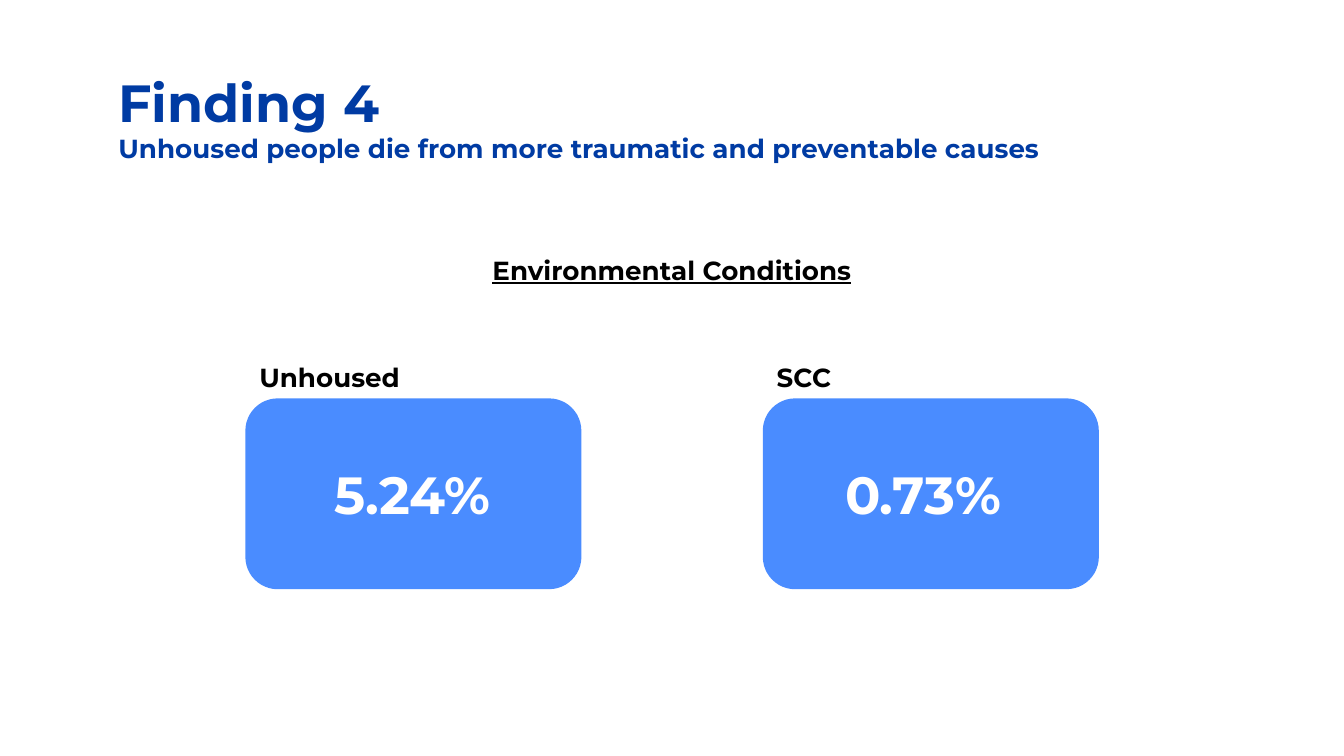
from pptx import Presentation
from pptx import util as u
from pptx.dml.color import RGBColor
from pptx.enum import shapes, text

COLORS = {"title": "003BA3", "card": "4A8CFF", "ink": "000000", "value": "FFFFFF"}
PAD = 7.2


class Deck:
    font = "Montserrat"

    def __init__(self, width, height):
        self.prs = Presentation()
        self.prs.slide_width, self.prs.slide_height = u.Pt(width), u.Pt(height)
        self.s = self.prs.slides.add_slide(self.prs.slide_layouts[5])

    def color(self, name):
        return RGBColor.from_string(COLORS[name])

    def frame(self, sp, lines, color, align, underline=None):
        tf = sp.text_frame
        tf.word_wrap = True
        tf.auto_size = text.MSO_AUTO_SIZE.NONE
        tf.vertical_anchor = text.MSO_ANCHOR.TOP
        tf.margin_left = tf.margin_right = tf.margin_top = tf.margin_bottom = u.Pt(PAD)
        for i, (words, size) in enumerate(lines):
            p = tf.add_paragraph() if i else tf.paragraphs[0]
            p.alignment = align
            r = p.add_run()
            r.text = words
            r.font.name, r.font.size, r.font.bold = self.font, u.Pt(size), True
            r.font.underline = underline
            r.font.color.rgb = self.color(color)

    def title(self, x, y, w, h, lines):
        sp = self.s.shapes.title
        sp.left, sp.top, sp.width, sp.height = map(u.Pt, (x, y, w, h))
        self.frame(sp, lines, "title", text.PP_ALIGN.LEFT)

    def label(self, x, y, w, h, words, size=14, color="ink",
              align=text.PP_ALIGN.LEFT, underline=None):
        sp = self.s.shapes.add_textbox(*map(u.Pt, (x, y, w, h)))
        self.frame(sp, [(words, size)], color, align, underline)

    def card(self, x, y, w, h):
        sp = self.s.shapes.add_shape(
            shapes.MSO_SHAPE.ROUNDED_RECTANGLE, *map(u.Pt, (x, y, w, h)))
        sp.adjustments[0] = 0.167
        sp.shadow.inherit = False
        sp.fill.solid()
        sp.fill.fore_color.rgb = self.color("card")
        sp.line.color.rgb = self.color("card")
        sp.line.width = u.Pt(0.75)


def main():
    deck = Deck(720, 405)
    deck.title(56.2, 30.2, 607, 45.4, [
        ("Finding 4", 28),
        ("Unhoused people die from more traumatic and preventable causes", 14),
    ])
    deck.label(146.9, 128.9, 426.2, 31.7, "Environmental Conditions",
               align=text.PP_ALIGN.CENTER, underline=True)
    groups = [("Unhoused", "5.24%", 131.8, 172.1), ("SCC", "0.73%", 409, 445.7)]
    for name, value, x, value_x in groups:
        deck.card(x, 213.8, 179.3, 101.5)
        deck.label(x, 186.5, 426.2, 31.7, name)
        deck.label(value_x, 240.5, 105.8, 48.2, value, 28, "value")
    deck.prs.save("out.pptx")


if __name__ == "__main__":
    main()
